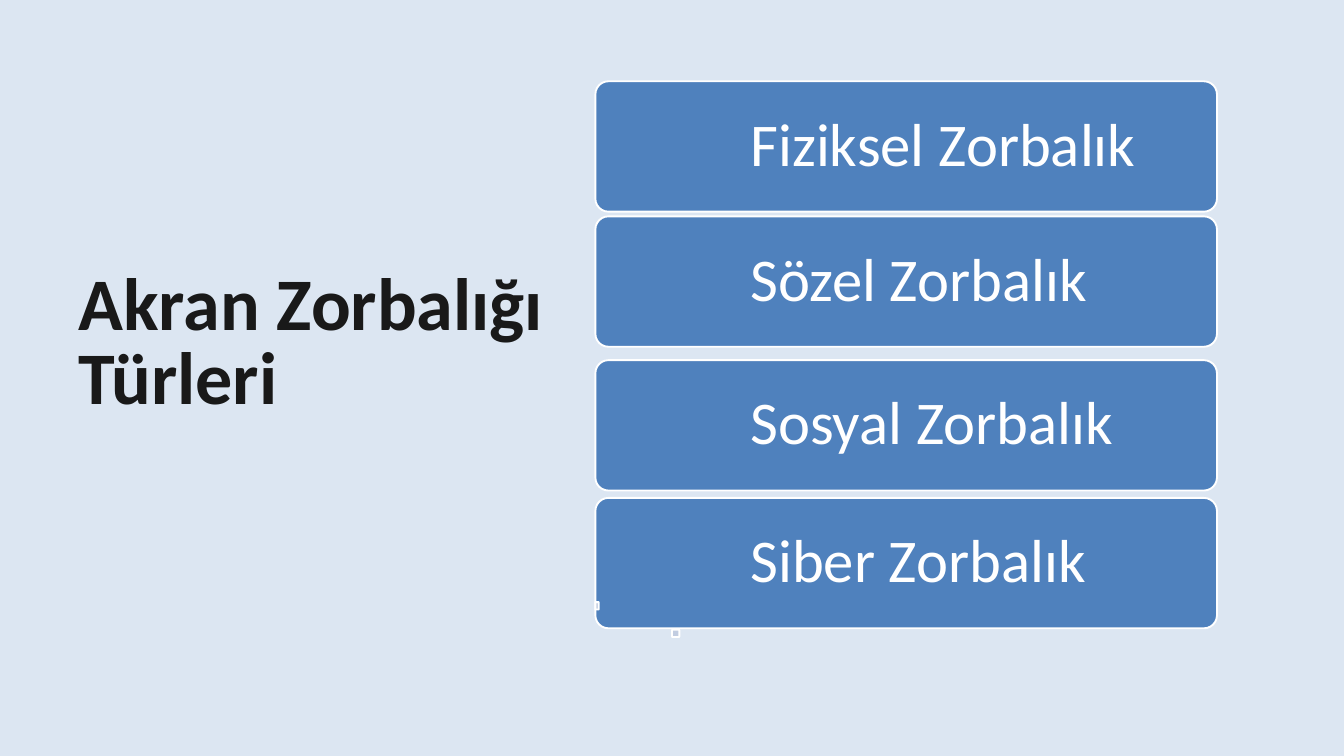
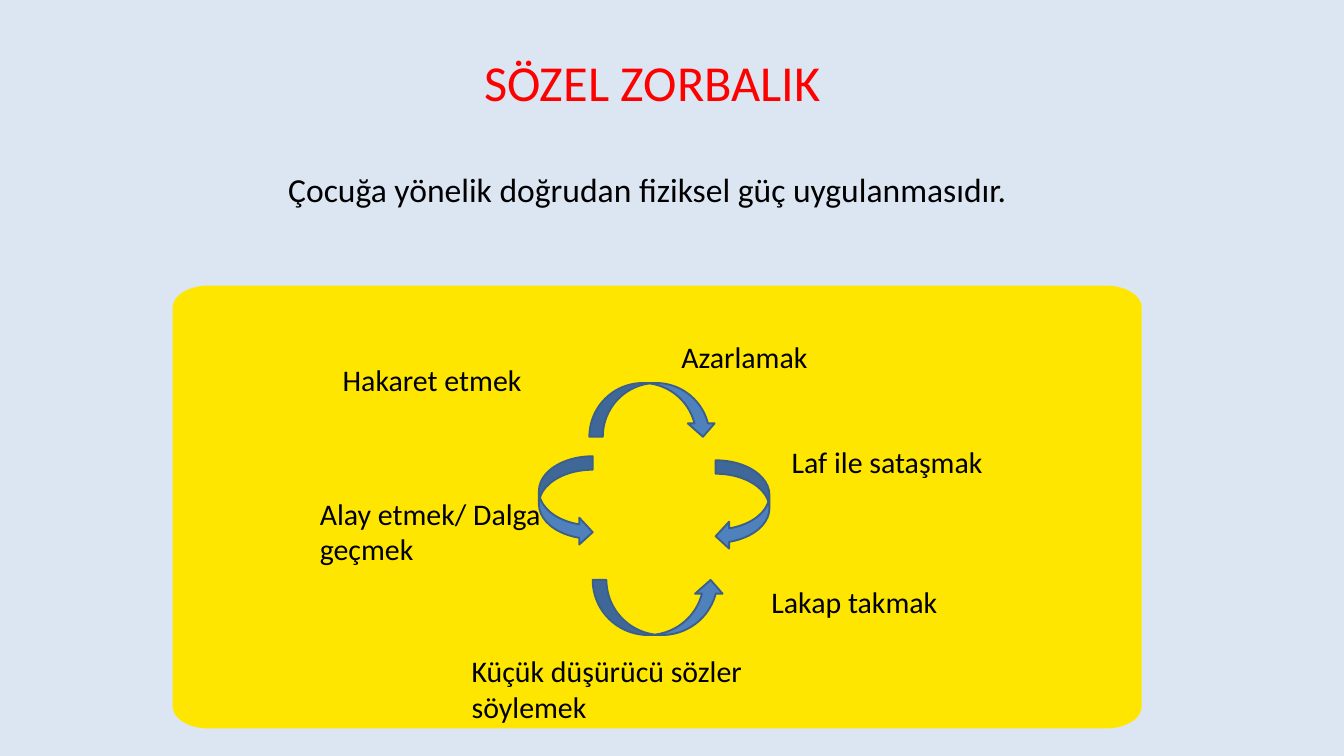
from math import cos, pi, sin

from pptx import Presentation
from pptx.dml.color import RGBColor
from pptx.enum.shapes import MSO_SHAPE
from pptx.enum.text import MSO_ANCHOR, MSO_AUTO_SIZE, PP_ALIGN
from pptx.util import Inches, Pt

COLORS = {
    "background": "DCE6F2",
    "blue": "4F81BD",
    "pale blue": "C2CDE1",
    "arrow edge": "3A5F8C",
    "yellow": "FEE600",
    "red": "FF0000",
    "white": "FFFFFF",
    "black": "000000",
    "dark": "191919",
}
FONT = "Calibri"
COLUMNS, ROWS = 20, 11.25
TITLE_ONLY = 5


def color(name):
    return RGBColor.from_string(COLORS[name])


def write(shape, text, size=32, fill="black", bold=False, align=PP_ALIGN.LEFT,
          anchor=MSO_ANCHOR.TOP, insets=(0.1, 0.05, 0.1, 0.05), spacing=1.0):
    """Put one paragraph of text into a shape and format it."""
    frame = shape.text_frame
    frame.word_wrap = True
    frame.auto_size = MSO_AUTO_SIZE.NONE
    frame.vertical_anchor = anchor
    (frame.margin_left, frame.margin_top,
     frame.margin_right, frame.margin_bottom) = map(Inches, insets)
    para = frame.paragraphs[0]
    para.alignment = align
    para.line_spacing = spacing
    span = para.add_run()
    span.text = text
    span.font.name = FONT
    span.font.size = Pt(size)
    span.font.bold = bold
    span.font.color.rgb = color(fill)


class Page:
    """Holds the deck, its grid and the current slide."""

    def __init__(self, deck):
        self.deck = deck
        self.column = deck.slide_width / COLUMNS
        self.row = deck.slide_height / ROWS
        background = deck.slide_master.background.fill
        background.solid()
        background.fore_color.rgb = color("background")

    def start(self):
        layout = self.deck.slide_layouts[TITLE_ONLY]
        self.slide = self.deck.slides.add_slide(layout)

    def area(self, left, top, width, height):
        return (round(left * self.column), round(top * self.row),
                round(width * self.column), round(height * self.row))

    def paint(self, shape, fill, line=None):
        shape.shadow.inherit = False
        shape.fill.solid()
        shape.fill.fore_color.rgb = color(fill)
        if line:
            shape.line.color.rgb = color(line)
            shape.line.width = Pt(2)
        else:
            shape.line.fill.background()

    def title(self, text, place, **style):
        box = self.slide.shapes.title
        box.left, box.top, box.width, box.height = self.area(*place)
        write(box, text, **style)

    def label(self, text, place, **style):
        write(self.slide.shapes.add_textbox(*self.area(*place)), text, **style)

    def shape(self, kind, place, fill="blue", line="white"):
        shape = self.slide.shapes.add_shape(kind, *self.area(*place))
        self.paint(shape, fill, line)
        return shape

    def rounded(self, place, fill="blue"):
        box = self.shape(MSO_SHAPE.ROUNDED_RECTANGLE, place, fill)
        box.adjustments[0] = 0.1
        return box

    def panel(self, place, radius_x, radius_y, fill, steps=16):
        """Draw a panel whose four corners are quarter ellipses."""
        left, top, width, height = place
        centers = [(left + width - radius_x, top + height - radius_y),
                   (left + radius_x, top + height - radius_y),
                   (left + radius_x, top + radius_y),
                   (left + width - radius_x, top + radius_y)]
        points = []
        for corner, (x, y) in enumerate(centers):
            for step in range(steps + 1):
                angle = (corner + step / steps) * pi / 2
                points.append(((x + radius_x * cos(angle)) * self.column,
                               (y + radius_y * sin(angle)) * self.row))
        builder = self.slide.shapes.build_freeform(*points[0])
        builder.add_line_segments(points[1:], close=True)
        self.paint(builder.convert_to_shape(), fill)


def types_slide(page):
    page.start()
    page.title("Akran Zorbalığı Türleri", (1.17, 4.04, 7.68, 3.34), size=79.4,
               fill="dark", bold=True, insets=(0, 0, 0, 0), spacing=Pt(79.4))

    # One bar for each type
    bars = [("Fiziksel Zorbalık", 1.21), ("Sözel Zorbalık", 3.22),
            ("Sosyal Zorbalık", 5.36), ("Siber Zorbalık", 7.41)]
    for text, top in bars:
        bar = page.rounded((8.86, top, 9.25, 1.94))
        write(bar, text, size=65, fill="white", anchor=MSO_ANCHOR.MIDDLE,
              insets=(2.25, 0.27, 0.2, 0.27), spacing=0.9)

    # Small marks at the last bar
    for place in [(10, 9.37, 0.11, 0.11), (8.86, 8.96, 0.05, 0.11)]:
        page.rounded(place, "pale blue")


def verbal_slide(page):
    page.start()
    page.panel((2.57, 4.25, 14.42, 6.59), 0.53, 0.33, "yellow")
    page.title("SÖZEL ZORBALIK", (6.15, 0.71, 7.12, 1.01), size=54,
               fill="red", align=PP_ALIGN.CENTER)
    page.label("Çocuğa yönelik doğrudan fiziksel güç uygulanmasıdır.",
               (2.58, 2.47, 14.11, 0.71), size=36, align=PP_ALIGN.CENTER)

    # Ring of arrows
    arrows = [(MSO_SHAPE.CURVED_DOWN_ARROW, (8.77, 5.7, 1.89, 0.8)),
              (MSO_SHAPE.CURVED_LEFT_ARROW, (10.65, 6.85, 0.8, 1.33)),
              (MSO_SHAPE.CURVED_RIGHT_ARROW, (8.02, 6.79, 0.8, 1.33)),
              (MSO_SHAPE.CURVED_UP_ARROW, (8.82, 8.63, 1.96, 0.82))]
    for kind, place in arrows:
        page.shape(kind, place, line="arrow edge")

    # Examples around the ring
    examples = [("Alay etmek/ Dalga geçmek", (4.66, 7.32, 4.11, 1.18)),
                (" Laf ile sataşmak", (11.58, 6.56, 4.16, 0.64)),
                ("Azarlamak", (10.04, 4.99, 2.67, 0.64)),
                ("Lakap takmak", (11.38, 8.63, 3.45, 0.64)),
                ("Küçük düşürücü sözler söylemek", (6.92, 9.66, 5.58, 1.18)),
                (" Hakaret etmek", (4.9, 5.33, 3.87, 0.64))]
    for text, place in examples:
        page.label(text, place)


def main():
    deck = Presentation()
    deck.slide_width = Inches(20)
    deck.slide_height = Inches(11.25)
    page = Page(deck)
    types_slide(page)
    verbal_slide(page)
    deck.save("out.pptx")


if __name__ == "__main__":
    main()
